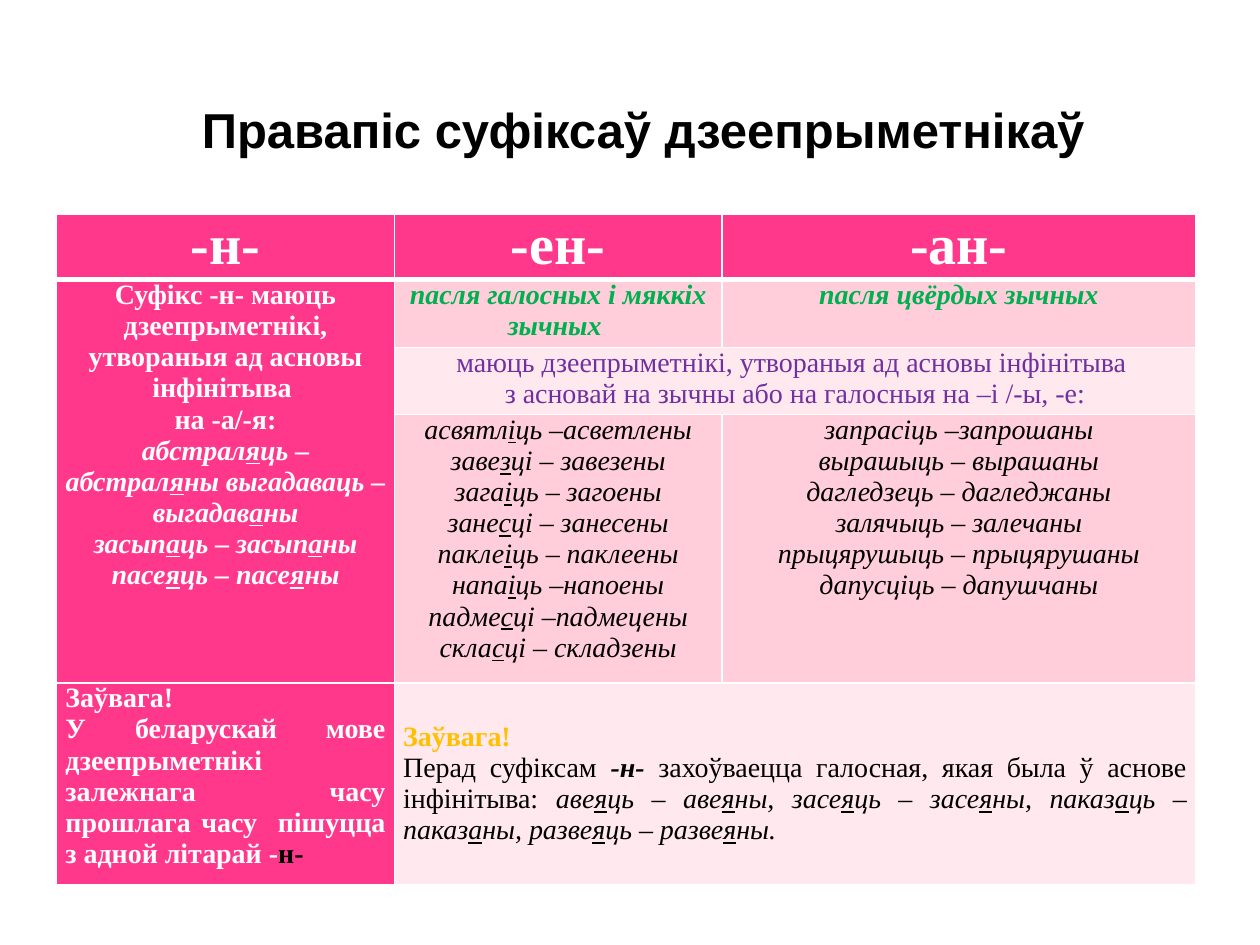
"""Builds the slide on the spelling of Belarusian participle suffixes."""
from lxml.etree import SubElement
from pptx import Presentation
from pptx.dml.color import RGBColor
from pptx.enum.text import MSO_ANCHOR, MSO_AUTO_SIZE, PP_ALIGN
from pptx.oxml.ns import qn
from pptx.util import Inches, Pt

PINK = RGBColor(0xFF, 0x38, 0x8C)
ROSE = RGBColor(0xFF, 0xCE, 0xDA)
PALE = RGBColor(0xFF, 0xE8, 0xEE)
WHITE = RGBColor(0xFF, 0xFF, 0xFF)
BLACK = RGBColor(0, 0, 0)
GREEN = RGBColor(0, 0xB0, 0x50)
PURPLE = RGBColor(0x70, 0x30, 0xA0)
GOLD = RGBColor(0xFF, 0xC0, 0)

TITLE = "Правапіс суфіксаў дзеепрыметнікаў"
COLUMN_WIDTHS = (2.68, 2.6, 3.76)
ROW_HEIGHTS = (0.52, 0.54, 0.53, 2.13, 1.6)
MERGES = (((1, 0), (3, 0)), ((2, 1), (2, 2)), ((4, 1), (4, 2)))
MARKS = {"_": "underline", "*": "italic", "^": "bold", "~": "black"}

STEM_RULE = (
    "^Суфікс -н- маюць дзеепрыметнікі, утвораныя ад асновы інфінітыва ",
    "^на -а/-я:",
    "^*абстрал_я_ць – абстрал_я_ны выгадаваць – выгадав_а_ны",
    "^*засып_а_ць – засып_а_ны",
    "^*пасе_я_ць – пасе_я_ны",
)
SHARED_RULE = (
    "маюць дзеепрыметнікі, утвораныя ад асновы інфінітыва ",
    "з асновай на зычны або на галосныя на –і /-ы, -е:",
)
SOFT_EXAMPLES = (
    "*асвятл_і_ць –асветлены", "*заве_з_ці – завезены",
    "*зага_і_ць – загоены", "*зане_с_ці – занесены",
    "*пакле_і_ць – паклеены", "*напа_і_ць –напоены",
    "*падме_с_ці –падмецены", "*скла_с_ці – складзены",
)
HARD_EXAMPLES = (
    "*запрасіць –запрошаны", "*вырашыць – вырашаны",
    "*дагледзець – дагледжаны", "*залячыць – залечаны",
    "*прыцярушыць – прыцярушаны", "*дапусціць – дапушчаны",
)
SINGLE_LETTER_NOTE = (
    "^Заўвага! ",
    "^У беларускай мове дзеепрыметнікі залежнага часу прошлага часу  "
    "пішуцца з адной літарай -~н-",
)
VOWEL_NOTE = (
    "^Заўвага! ",
    "~Перад суфіксам ^*-н- ^*захоўваецца галосная, якая была ў аснове "
    "інфінітыва: *аве_я_ць – аве_я_ны, засе_я_ць – засе_я_ны, "
    "паказ_а_ць – паказ_а_ны, разве_я_ць – разве_я_ны.",
)


def split_marks(text):
    """Yield each stretch of text with the set of styles switched on."""
    styles, stretch = set(), ""
    for letter in text:
        if letter in MARKS:
            if stretch:
                yield stretch, frozenset(styles)
            styles ^= {MARKS[letter]}
            stretch = ""
        else:
            stretch += letter
    if stretch:
        yield stretch, frozenset(styles)


def add_runs(paragraph, text, size, color):
    """Write marked text into a paragraph as formatted runs."""
    for stretch, styles in split_marks(text):
        run = paragraph.add_run()
        run.text = stretch
        font = run.font
        font.name, font.size = "Times New Roman", Pt(size)
        font.bold = "bold" in styles
        font.italic = "italic" in styles
        font.underline = "underline" in styles
        font.color.rgb = BLACK if "black" in styles else color


def add_borders(cell, row):
    """Draw white borders, with a thick line under the header row."""
    properties = cell._tc.get_or_add_tcPr()
    widths = {"L": 1, "R": 1, "T": 3 if row == 1 else 1, "B": 3 if row == 0 else 1}
    for side, width in widths.items():
        line = SubElement(properties, qn(f"a:ln{side}"), w=str(Pt(width)))
        fill = SubElement(line, qn("a:solidFill"))
        SubElement(fill, qn("a:srgbClr"), val=str(WHITE))


def fill_cell(cell, lines, fill, color, size=16, alignment=PP_ALIGN.CENTER):
    """Set the fill and the paragraphs of one table cell."""
    cell.fill.solid()
    cell.fill.fore_color.rgb = fill
    cell.margin_left = cell.margin_right = Inches(0.07)
    cell.margin_top = cell.margin_bottom = 0
    frame = cell.text_frame
    for index, line in enumerate(lines):
        paragraph = frame.add_paragraph() if index else frame.paragraphs[0]
        paragraph.alignment = alignment
        add_runs(paragraph, line, size, color)


def add_title(slide):
    """Place the heading in the title placeholder."""
    title = slide.shapes.title
    title.left, title.top = Inches(0.51), Inches(0.74)
    title.width, title.height = Inches(8.98), Inches(0.57)
    title.fill.solid()
    title.fill.fore_color.rgb = WHITE
    frame = title.text_frame
    frame.text = TITLE
    frame.auto_size = MSO_AUTO_SIZE.NONE
    frame.vertical_anchor = MSO_ANCHOR.MIDDLE
    paragraph = frame.paragraphs[0]
    paragraph.alignment = PP_ALIGN.CENTER
    paragraph._p.get_or_add_pPr().set("indent", str(Inches(0.21)))
    font = paragraph.runs[0].font
    font.name, font.size, font.bold = "Arial", Pt(28), True
    font.color.rgb = BLACK


def add_grid(slide):
    """Add the empty table with its sizes, borders and merged cells."""
    table = slide.shapes.add_table(
        len(ROW_HEIGHTS), len(COLUMN_WIDTHS), Inches(0.45), Inches(1.7),
        Inches(sum(COLUMN_WIDTHS)), Inches(sum(ROW_HEIGHTS))).table
    for column, width in zip(table.columns, COLUMN_WIDTHS):
        column.width = Inches(width)
    for index, (row, height) in enumerate(zip(table.rows, ROW_HEIGHTS)):
        row.height = Inches(height)
        for cell in row.cells:
            add_borders(cell, index)
    for first, last in MERGES:
        table.cell(*first).merge(table.cell(*last))
    return table


def fill_table(table):
    """Write the suffix rules, examples and notes."""
    for column, suffix in enumerate(("-н-", "-ен-", "-ан-")):
        fill_cell(table.cell(0, column), ["^" + suffix], PINK, WHITE, size=32)
    fill_cell(table.cell(1, 0), STEM_RULE, PINK, WHITE)
    fill_cell(table.cell(1, 1), ["^*пасля галосных і мяккіх зычных "], ROSE, GREEN)
    fill_cell(table.cell(1, 2), ["^*пасля цвёрдых зычных"], ROSE, GREEN)
    fill_cell(table.cell(2, 1), SHARED_RULE, PALE, PURPLE)
    fill_cell(table.cell(3, 1), SOFT_EXAMPLES, ROSE, BLACK)
    fill_cell(table.cell(3, 2), HARD_EXAMPLES, ROSE, BLACK)
    fill_cell(table.cell(4, 0), SINGLE_LETTER_NOTE, PINK, WHITE,
              alignment=PP_ALIGN.JUSTIFY)
    fill_cell(table.cell(4, 1), VOWEL_NOTE, PALE, GOLD,
              alignment=PP_ALIGN.JUSTIFY)
    table.cell(4, 1).vertical_anchor = MSO_ANCHOR.MIDDLE


def main():
    """Build and save the presentation."""
    presentation = Presentation()
    presentation.slide_width, presentation.slide_height = Inches(10), Inches(7.5)
    slide = presentation.slides.add_slide(presentation.slide_layouts[5])
    add_title(slide)
    fill_table(add_grid(slide))
    presentation.save("out.pptx")


if __name__ == "__main__":
    main()
